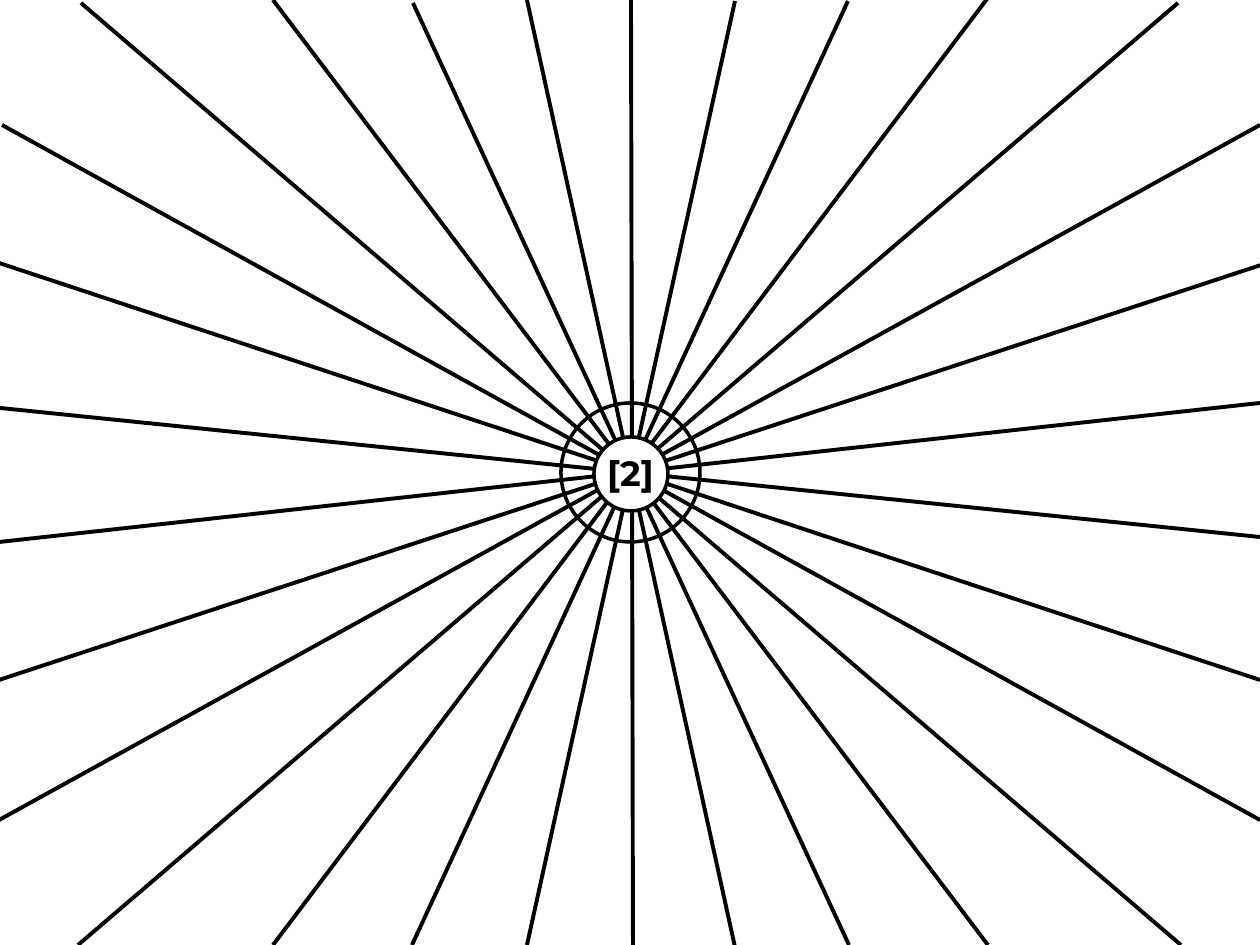
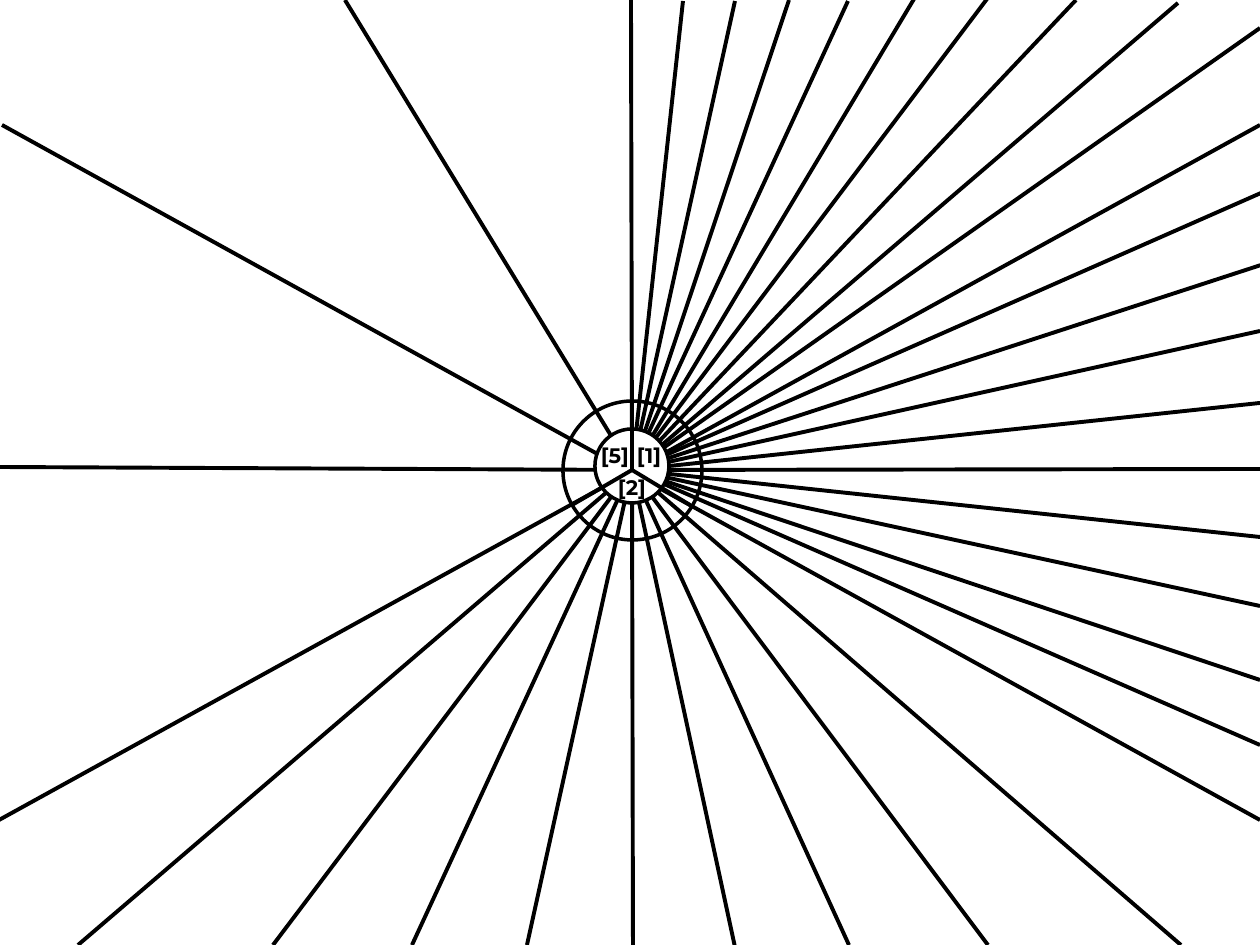
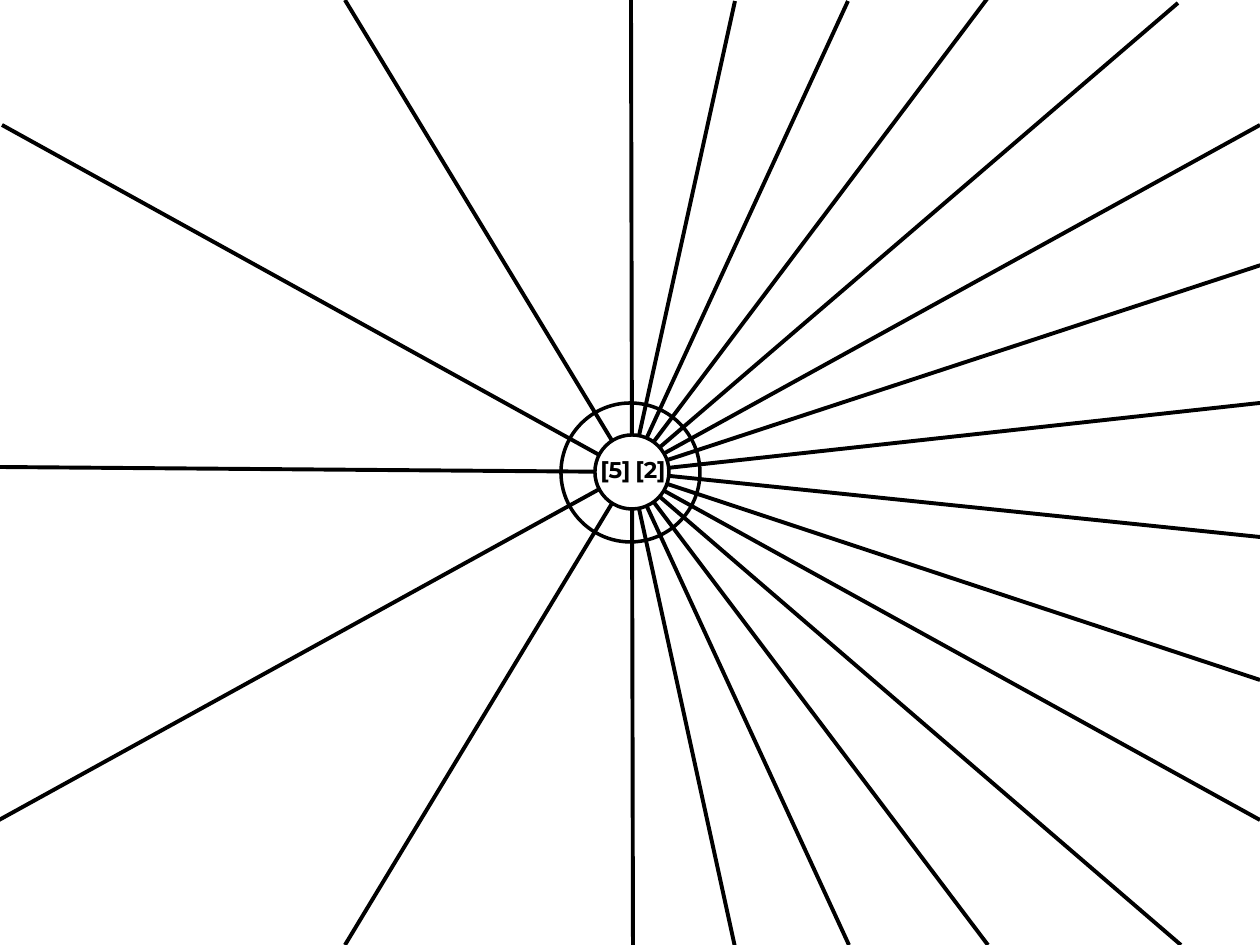
from dataclasses import dataclass

from lxml.etree import SubElement
from pptx import Presentation
from pptx.dml.color import RGBColor
from pptx.enum.shapes import MSO_CONNECTOR, MSO_SHAPE
from pptx.enum.text import MSO_AUTO_SIZE, PP_ALIGN
from pptx.oxml.ns import qn
from pptx.util import Emu, Pt


@dataclass(frozen=True)
class Theme:
    ink: RGBColor = RGBColor(0x00, 0x00, 0x00)
    paper: RGBColor = RGBColor(0xFF, 0xFF, 0xFF)
    font: str = "Montserrat"
    large: int = 20
    medium: int = 13
    small: int = 12
    circle_line: float = 2
    ray_line: float = 2.25


THEME = Theme()
PX_PER_INCH = 126
WIDTH, HEIGHT = 1260, 945
RING_SIZE, CAP_SIZE = 139, 74
HALF_TURN = 30

# Where each ray meets the slide edge: 60 ticks, clockwise from the top
TIPS = {
    0: (631, 0), 1: (683, 1), 2: (735, 1), 3: (789, 0), 4: (848, 1),
    5: (914, -1), 6: (987, -1), 7: (1076, 0), 8: (1178, 3), 9: (1260, 28),
    10: (1260, 125), 11: (1261, 193), 12: (1261, 265), 13: (1260, 331),
    14: (1260, 403), 15: (1260, 469), 16: (1260, 537), 17: (1260, 606),
    18: (1260, 680), 19: (1260, 745), 20: (1260, 820), 22: (1181, 945),
    24: (988, 945), 26: (849, 945), 28: (735, 947), 30: (633, 945),
    32: (527, 945), 34: (412, 945), 35: (345, 945), 36: (273, 945),
    38: (78, 945), 40: (-1, 820), 42: (-1, 680), 44: (-1, 542),
    45: (0, 467), 46: (0, 408), 48: (-1, 263), 50: (2, 125),
    52: (81, 3), 54: (273, 0), 55: (345, 0), 56: (413, 3), 58: (527, 0),
}


def px(length):
    return Emu(round(length * 914400 / PX_PER_INCH))


def add_circle(wheel, left, top, size, filled):
    circle = wheel.shapes.add_shape(
        MSO_SHAPE.OVAL, px(left), px(top), px(size), px(size))
    circle.shadow.inherit = False
    if filled:
        circle.fill.solid()
        circle.fill.fore_color.rgb = THEME.paper
    else:
        circle.fill.background()
    circle.line.color.rgb = THEME.ink
    circle.line.width = Pt(THEME.circle_line)


def add_ray(wheel, start, end):
    ray = wheel.shapes.add_connector(
        MSO_CONNECTOR.STRAIGHT, *map(px, (*start, *end)))
    ray.line.color.rgb = THEME.ink
    ray.line.width = Pt(THEME.ray_line)
    SubElement(ray._element.spPr, qn("a:effectLst"))


def add_label(wheel, words, box, size, tight=True):
    label = wheel.shapes.add_textbox(*map(px, box))
    frame = label.text_frame
    frame.word_wrap = tight
    frame.auto_size = MSO_AUTO_SIZE.SHAPE_TO_FIT_TEXT
    if tight:
        frame.margin_left = frame.margin_right = 0
        frame.margin_top = frame.margin_bottom = 0
    line = frame.paragraphs[0]
    line.alignment = PP_ALIGN.CENTER
    run = line.add_run()
    run.text = words
    run.font.name = THEME.font
    run.font.size = Pt(size)
    run.font.bold = True
    run.font.color.rgb = THEME.ink


def add_wheel(deck, ring, cap, hub, diameters, spokes):
    """Draw ring, rays and cap on a new slide; return the group for labels."""
    slide = deck.slides.add_slide(deck.slide_layouts[6])
    wheel = slide.shapes.add_group_shape()
    add_circle(wheel, *ring, RING_SIZE, filled=False)
    for tick in diameters:
        add_ray(wheel, TIPS[tick + HALF_TURN], TIPS[tick])
    for tick in spokes:
        add_ray(wheel, hub, TIPS[tick])
    add_circle(wheel, *cap, CAP_SIZE, filled=True)
    return wheel


def add_even_wheel(deck):
    wheel = add_wheel(deck, ring=(561, 403), cap=(594, 437), hub=(631, 472),
                      diameters=range(0, HALF_TURN, 2), spokes=())
    add_label(wheel, "[2]", (592, 445, 77, 55), THEME.large, tight=False)


def add_three_part_wheel(deck):
    hub = (632, 470)
    spokes = [1, 3, 5, 7, 9, *range(11, 20), 22, 24, 26, 28, 45, 55]
    wheel = add_wheel(deck, ring=(563, 401), cap=(595, 429), hub=hub,
                      diameters=[0, 2, 4, 6, 8, 10, 20], spokes=spokes)
    # Dividers between the three parts
    for outer in ((632, 401), (572, 505), (690, 505)):
        add_ray(wheel, outer, hub)
    for words, left, top in (("[2]", 612, 475), ("[1]", 629, 443),
                             ("[5]", 595, 443)):
        add_label(wheel, words, (left, top, 40, 25), THEME.small)


def add_two_part_wheel(deck):
    spokes = [2, 4, 6, 8, 12, 14, 16, 18, 22, 24, 26, 28, 35, 45, 55]
    wheel = add_wheel(deck, ring=(561, 403), cap=(595, 435), hub=(631, 472),
                      diameters=[0, 10, 20], spokes=spokes)
    for words, left in (("[2]", 630), ("[5]", 595)):
        add_label(wheel, words, (left, 456, 41, 28), THEME.medium)


def main():
    deck = Presentation()
    deck.slide_width, deck.slide_height = px(WIDTH), px(HEIGHT)
    add_even_wheel(deck)
    add_three_part_wheel(deck)
    add_two_part_wheel(deck)
    deck.save("out.pptx")


if __name__ == "__main__":
    main()
